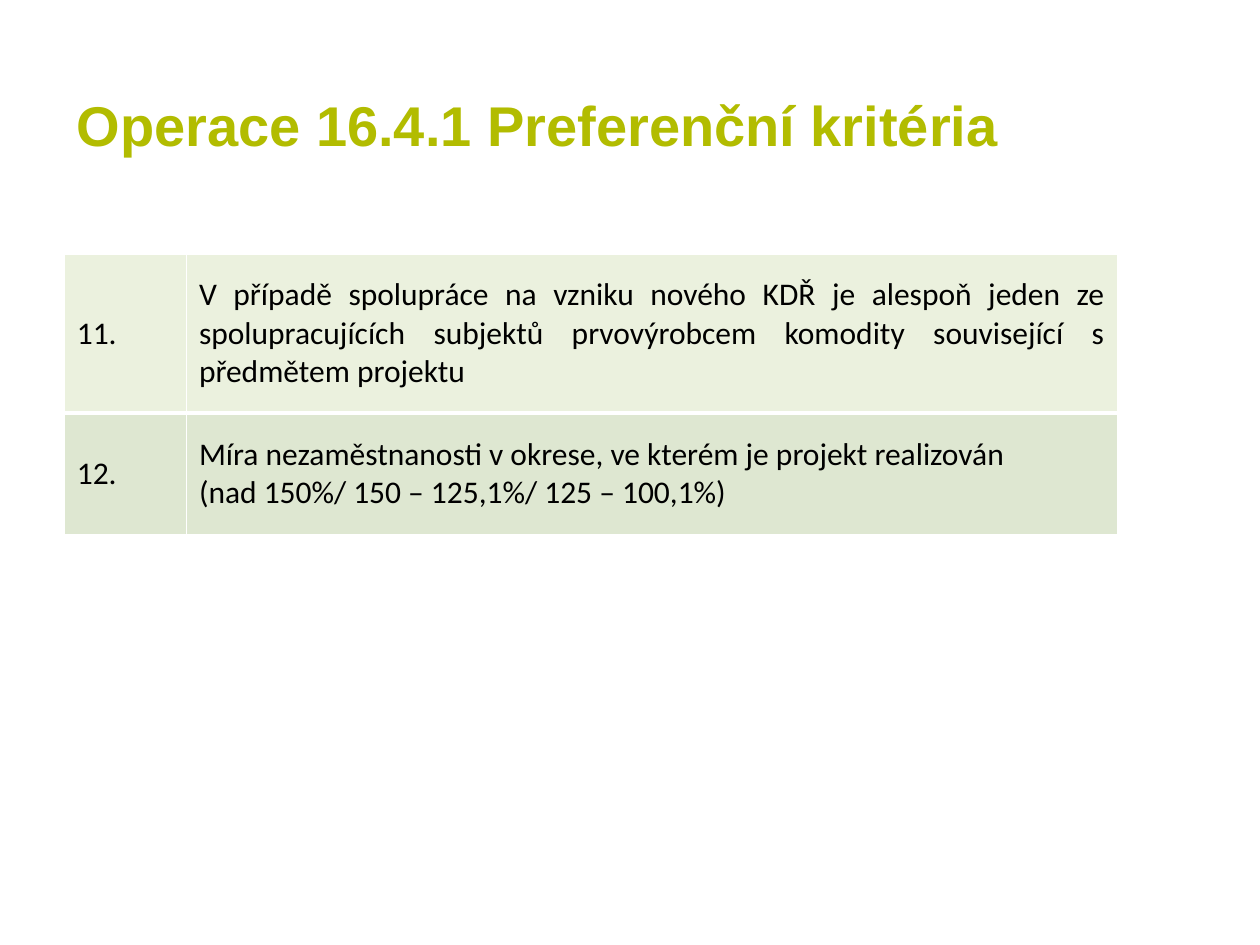
from lxml import etree
from pptx import Presentation
from pptx.dml.color import RGBColor
from pptx.enum.text import MSO_ANCHOR, PP_ALIGN
from pptx.oxml.ns import qn
from pptx.util import Inches, Pt

MIDDLE = MSO_ANCHOR.MIDDLE
LEFT, JUSTIFY = PP_ALIGN.LEFT, PP_ALIGN.JUSTIFY
WIDTH, HEIGHT = Inches(10), Inches(7.5)

CRITERIA = [
    ("11.", ["V případě spolupráce na vzniku nového KDŘ je alespoň jeden ze "
             "spolupracujících subjektů prvovýrobcem komodity související s "
             "předmětem projektu"]),
    ("12.", ["Míra nezaměstnanosti v okrese, ve kterém je projekt realizován",
             "(nad 150%/ 150 – 125,1%/ 125 – 100,1%)"]),
]


def color(value):
    """Return the colour for a hex string."""
    return RGBColor.from_string(value)


def write(frame, lines, size=18, font="Calibri", fill="000000", bold=False, align=LEFT):
    """Fill a text frame with one formatted paragraph for each line."""
    for index, line in enumerate(lines):
        paragraph = frame.add_paragraph() if index else frame.paragraphs[0]
        paragraph.alignment = align
        run = paragraph.add_run()
        run.text = line
        run.font.size, run.font.name, run.font.bold = Pt(size), font, bold
        run.font.color.rgb = color(fill)


class CriteriaSlide:
    """Hold the style and the current slide, and add elements to it."""

    accent = "B2BC00"
    border = "FFFFFF"
    row_fills = ("EBF1DE", "DEE7D1")

    def __init__(self, presentation):
        """Start a blank slide."""
        self.slide = presentation.slides.add_slide(presentation.slide_layouts[6])

    def place(self, left, top, width, height):
        """Turn shares of the slide's size into lengths."""
        return (int(WIDTH * left), int(HEIGHT * top),
                int(WIDTH * width), int(HEIGHT * height))

    def title(self, text, *shares):
        """Add the slide heading."""
        frame = self.slide.shapes.add_textbox(*self.place(*shares)).text_frame
        frame.word_wrap = True
        frame.vertical_anchor = MIDDLE
        write(frame, [text], size=32, font="Arial", fill=self.accent, bold=True)

    def outline(self, cell, **widths):
        """Draw the cell's borders with widths in points for each side."""
        properties = cell._tc.get_or_add_tcPr()
        for index, side in enumerate("LRTB"):
            line = etree.Element(qn(f"a:ln{side}"), w=str(Pt(widths.get(side, 1))))
            solid = etree.SubElement(line, qn("a:solidFill"))
            etree.SubElement(solid, qn("a:srgbClr"), val=self.border)
            properties.insert(index, line)

    def table(self, rows, column_shares, row_shares, *shares):
        """Add the numbered criteria with one fill for each row."""
        table = self.slide.shapes.add_table(
            len(rows), len(column_shares), *self.place(*shares)).table
        table.first_row = table.horz_banding = False
        for column, share in zip(table.columns, column_shares):
            column.width = int(WIDTH * share)
        for row, share in zip(table.rows, row_shares):
            row.height = int(HEIGHT * share)
        for index, (number, lines) in enumerate(rows):
            edge = {"T": 3} if index else {"B": 3}
            for cell, content in zip(table.rows[index].cells, ([number], lines)):
                cell.vertical_anchor = MIDDLE
                cell.fill.solid()
                cell.fill.fore_color.rgb = color(self.row_fills[index])
                self.outline(cell, **edge)
                write(cell.text_frame, content, align=JUSTIFY)


def main():
    """Build and save the slide."""
    presentation = Presentation()
    presentation.slide_width, presentation.slide_height = WIDTH, HEIGHT
    page = CriteriaSlide(presentation)
    page.title("Operace 16.4.1 Preferenční kritéria", 0.051, 0.048, 0.9, 0.167)
    page.table(CRITERIA, (0.097, 0.739), (0.168, 0.129), 0.051, 0.269, 0.836, 0.297)
    presentation.save("out.pptx")


if __name__ == "__main__":
    main()
